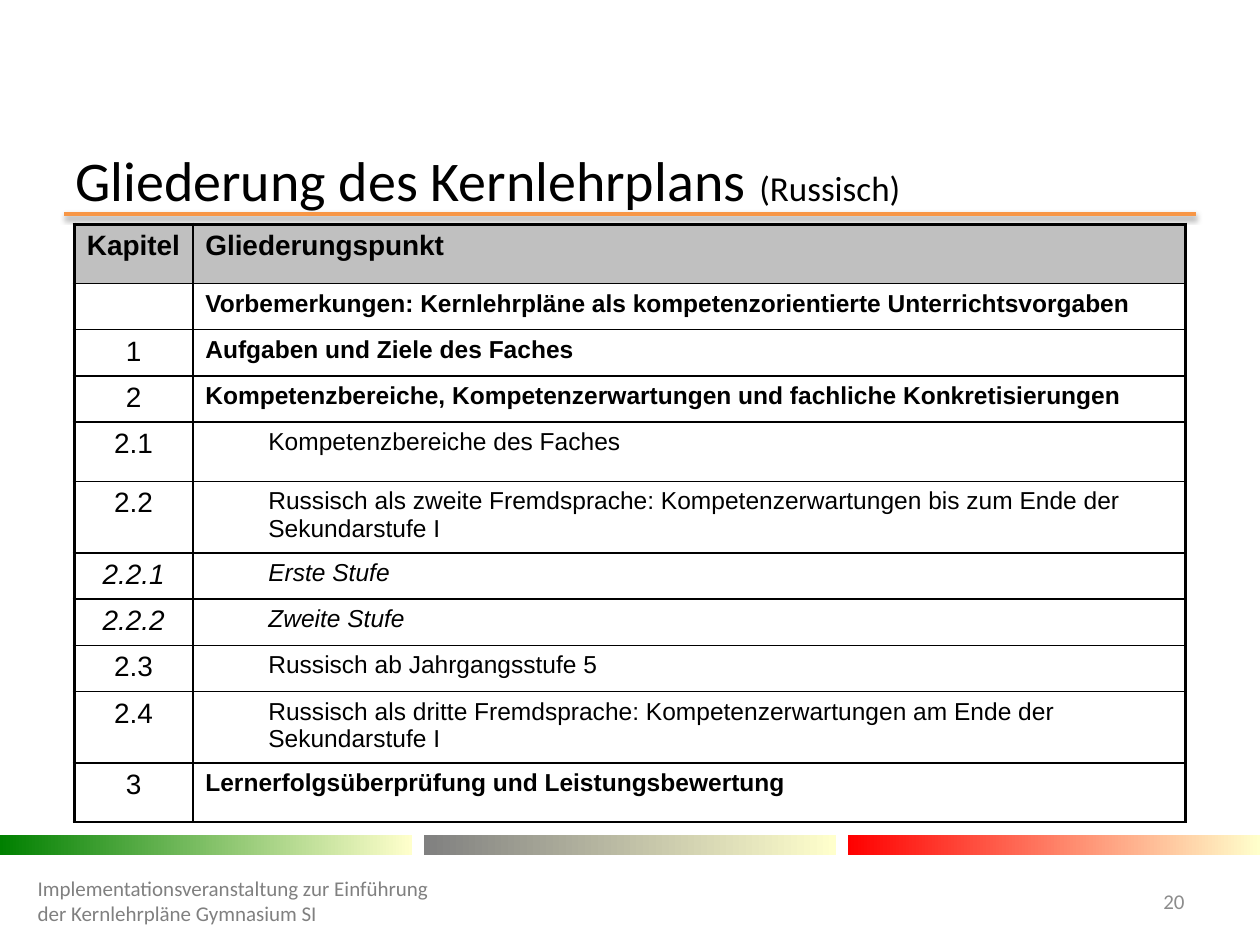
from dataclasses import dataclass

from lxml.etree import SubElement
from pptx import Presentation
from pptx.dml.color import RGBColor
from pptx.enum.shapes import MSO_CONNECTOR, MSO_SHAPE
from pptx.enum.text import MSO_ANCHOR, PP_ALIGN
from pptx.oxml import parse_xml
from pptx.oxml.ns import nsdecls, qn
from pptx.util import Inches, Pt


@dataclass(frozen=True)
class Theme:
    """Colours, fonts and type sizes of the slide."""
    black: str = "000000"
    accent: str = "F79646"
    header: str = "C0C0C0"
    footer: str = "808080"
    number: str = "8C8C8C"
    fade: str = "FFFFCC"
    bands: tuple = ("008000", "808080", "FF0000")
    heading: str = "Calibri"
    body: str = "Arial"
    title: int = 32
    subtitle: int = 20
    chapter: int = 16
    topic: int = 14
    small: int = 12
    outer: float = 2.25
    inner: float = 1


T = Theme()
W, H = 10, 7.5
LOW, MID, HIGH = 0.35, 0.47, 0.54
ROWS = [
    ("Kapitel", "Gliederungspunkt", "header", MID),
    ("", "Vorbemerkungen: Kernlehrpläne als kompetenzorientierte Unterrichtsvorgaben", "main", LOW),
    ("1", "Aufgaben und Ziele des Faches", "main", LOW),
    ("2", "Kompetenzbereiche, Kompetenzerwartungen und fachliche Konkretisierungen", "main", LOW),
    ("2.1", "Kompetenzbereiche des Faches", "sub", MID),
    ("2.2", "Russisch als zweite Fremdsprache: Kompetenzerwartungen bis zum Ende der "
            "Sekundarstufe I", "sub", HIGH),
    ("2.2.1", "Erste Stufe", "stage", LOW),
    ("2.2.2", "Zweite Stufe", "stage", LOW),
    ("2.3", "Russisch ab Jahrgangsstufe 5", "sub", LOW),
    ("2.4", "Russisch als dritte Fremdsprache: Kompetenzerwartungen am Ende der "
            "Sekundarstufe I", "sub", HIGH),
    ("3", "Lernerfolgsüberprüfung und Leistungsbewertung", "main", MID),
]


def rgb(value):
    """Turn a hex string into a colour."""
    return RGBColor.from_string(value)


def set_font(font, name, size, color, bold=False, italic=False):
    """Style a paragraph or run font."""
    font.name, font.size, font.bold, font.italic = name, Pt(size), bold, italic
    font.color.rgb = rgb(color)


def add_text(s, box, runs, color, align=PP_ALIGN.LEFT):
    """Place one middle-anchored paragraph of (text, size) runs in the box."""
    tf = s.shapes.add_textbox(*map(Inches, box)).text_frame
    tf.word_wrap = True
    tf.vertical_anchor = MSO_ANCHOR.MIDDLE
    p = tf.paragraphs[0]
    p.alignment = align
    set_font(p.font, T.heading, runs[0][1], color)
    for text, size in runs:
        r = p.add_run()
        r.text = text
        set_font(r.font, T.heading, size, color)


def add_title(s, box):
    """Write the title and draw the shadowed rule below it."""
    x, y, w, h = box
    add_text(s, box, [("Gliederung des Kernlehrplans ", T.title), ("(Russisch)", T.subtitle)], T.black)
    rule = s.shapes.add_connector(
        MSO_CONNECTOR.STRAIGHT, *map(Inches, (x + 0.01, y + h + 0.08, x + w - 0.01, y + h + 0.08)))
    rule.line.color.rgb = rgb(T.accent)
    rule.line.width = Pt(2)
    effects = SubElement(rule._element.spPr, qn("a:effectLst"))
    shadow = SubElement(effects, qn("a:outerShdw"), blurRad=str(Pt(3.1)), dist=str(Pt(1.6)),
                        dir="5400000", rotWithShape="0")
    color = SubElement(shadow, qn("a:srgbClr"), val=T.black)
    SubElement(color, qn("a:alpha"), val="38000")


def set_borders(cell, widths):
    """Draw the left, right, top and bottom borders of a cell."""
    tcPr = cell._tc.get_or_add_tcPr()
    for i, (side, width) in enumerate(zip("LRTB", widths)):
        tcPr.insert(i, parse_xml(
            f'<a:ln{side} {nsdecls("a")} w="{Pt(width)}"><a:solidFill>'
            f'<a:srgbClr val="{T.black}"/></a:solidFill></a:ln{side}>'))


def fill_cell(cell, text, kind, is_topic):
    """Write and style one table cell."""
    if kind == "header":
        cell.fill.solid()
        cell.fill.fore_color.rgb = rgb(T.header)
    else:
        cell.fill.background()
    p = cell.text_frame.paragraphs[0]
    if is_topic and kind in ("sub", "stage"):
        p.level = 1
        pPr = p._p.get_or_add_pPr()
        pPr.set("marL", str(Inches(0.5)))
        pPr.set("indent", "0")
    if not is_topic and kind != "header":
        p.alignment = PP_ALIGN.CENTER
    size = T.topic if is_topic and kind != "header" else T.chapter
    bold = kind == "header" or (is_topic and kind == "main")
    set_font(p.font, T.body, size, T.black, bold, kind == "stage")
    if text:
        r = p.add_run()
        r.text = text
        set_font(r.font, T.body, size, T.black, bold, kind == "stage")
    else:
        p._p.get_or_add_endParaRPr().set("sz", str(size * 100))


def add_outline(s, box):
    """Build the table of chapters in the box."""
    frame = s.shapes.add_table(len(ROWS), 2, *map(Inches, box))
    table = frame.table
    table.first_row = table.horz_banding = False
    chapter_width = 0.94
    for column, width in zip(table.columns, (chapter_width, box[2] - chapter_width)):
        column.width = Inches(width)
    for i, (chapter, topic, kind, height) in enumerate(ROWS):
        table.rows[i].height = Inches(height)
        top = T.inner if i else T.outer
        for j, text in enumerate((chapter, topic)):
            cell = table.cell(i, j)
            fill_cell(cell, text, kind, j == 1)
            sides = (T.inner, T.outer) if j else (T.outer, T.inner)
            set_borders(cell, (*sides, top, T.inner))


def add_bands(s, box):
    """Spread the fading colour bands evenly over the box."""
    x, y, w, h = box
    width = 3.27
    step = (w - width) / (len(T.bands) - 1)
    for i, color in enumerate(T.bands):
        sp = s.shapes.add_shape(MSO_SHAPE.RECTANGLE, *map(Inches, (x + i * step, y, width, h)))
        sp.shadow.inherit = False
        sp.line.fill.background()
        sp.fill.gradient()
        sp.fill.gradient_angle = 0
        for stop, value in zip(sp.fill.gradient_stops, (color, T.fade)):
            stop.color.rgb = rgb(value)


def add_footer(s, box):
    """Write the event name and the page number at the ends of the box."""
    x, y, w, h = box
    event = "Implementationsveranstaltung zur Einführung der Kernlehrpläne Gymnasium SI"
    add_text(s, (x, y, 3.31, h), [(event, T.small)], T.footer)
    add_text(s, (x + w - 0.64, y, 0.64, h), [("20", T.small)], T.number, PP_ALIGN.RIGHT)


def main():
    """Build and save the slide."""
    prs = Presentation()
    prs.slide_width, prs.slide_height = Inches(W), Inches(H)
    s = prs.slides.add_slide(prs.slide_layouts[6])
    add_bands(s, (0, 6.63, W, 0.16))
    add_title(s, (0.5, 1.23, W - 1, 0.39))
    add_footer(s, (0.2, 6.95, W - 0.7, 0.4))
    add_outline(s, (0.59, 1.78, 8.82, sum(row[3] for row in ROWS)))
    prs.save("out.pptx")


if __name__ == "__main__":
    main()
